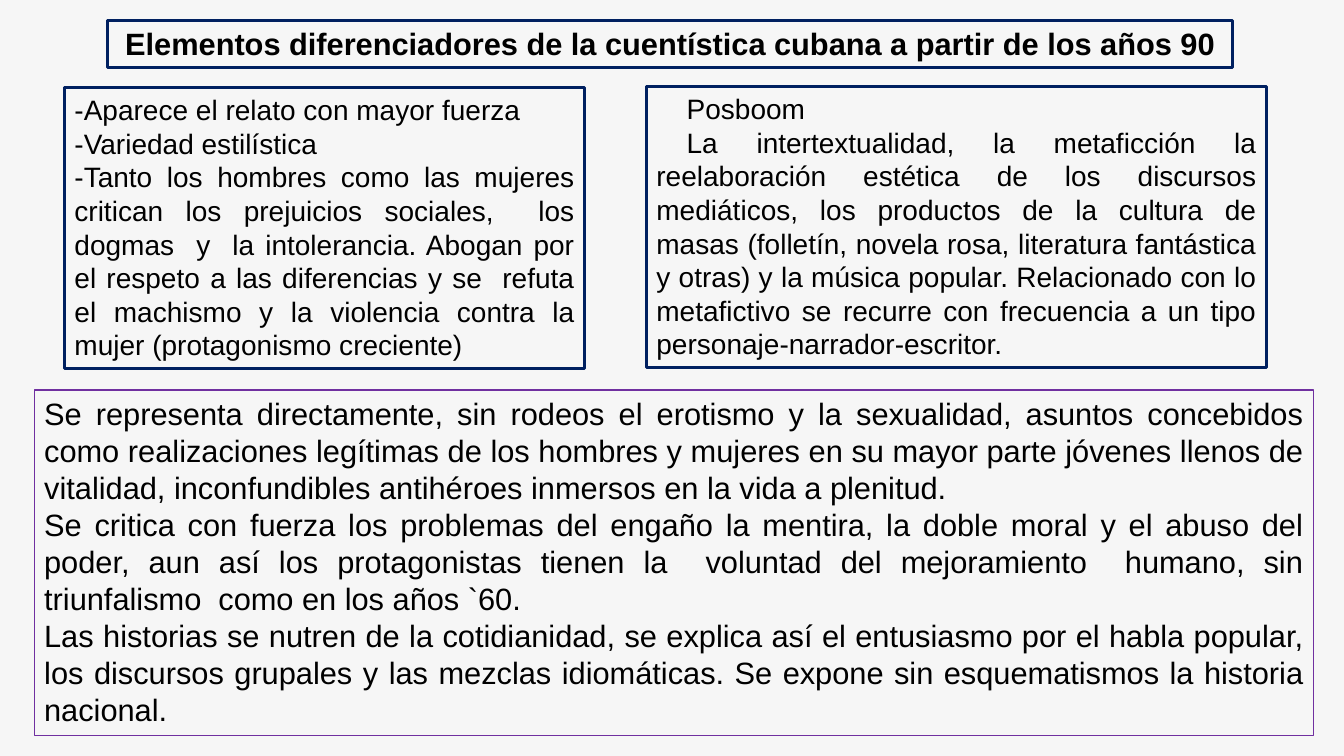
from pptx import Presentation
from pptx import util as u
from pptx.dml.color import RGBColor
from pptx.enum import shapes, text

NAVY, PURPLE, BLACK, PAPER = "002060", "7030A0", "000000", "F6F6F6"

TITLE = ["Elementos diferenciadores de la cuentística cubana a partir de los años 90"]
STYLE_TRAITS = [
    "-Aparece el relato con mayor fuerza",
    "-Variedad estilística",
    "-Tanto los hombres como las mujeres critican los prejuicios sociales,  los dogmas  y  "
    "la intolerancia. Abogan por el respeto a las diferencias y se  refuta el machismo y la "
    "violencia contra la mujer (protagonismo creciente)",
]
POSBOOM = [
    "Posboom",
    "La intertextualidad, la metaficción la reelaboración estética de los discursos "
    "mediáticos, los productos de la cultura de masas (folletín, novela rosa, literatura "
    "fantástica y otras) y la música popular. Relacionado con lo metafictivo se recurre con "
    "frecuencia a un tipo personaje-narrador-escritor.",
]
THEMES = [
    "Se representa directamente, sin rodeos el erotismo y la sexualidad, asuntos concebidos "
    "como realizaciones legítimas de los hombres y mujeres en su mayor parte jóvenes llenos "
    "de vitalidad, inconfundibles antihéroes inmersos en la vida a plenitud.",
    "Se critica con fuerza los problemas del engaño la mentira, la doble moral y el abuso "
    "del poder, aun así los protagonistas tienen la  voluntad del mejoramiento  humano, sin "
    "triunfalismo  como en los años `60.",
    "Las historias se nutren de la cotidianidad, se explica así el entusiasmo por el habla "
    "popular, los discursos grupales y las mezclas idiomáticas. Se expone sin esquematismos "
    "la historia nacional.",
]


def color(value):
    return RGBColor.from_string(value)


class Deck:
    """Draws framed text on a slide, with lengths in percent of its size."""

    font = "Arial"

    def __init__(self, width, height):
        self.prs = Presentation()
        self.prs.slide_width, self.prs.slide_height = u.Inches(width), u.Inches(height)
        self.s = self.prs.slides.add_slide(self.prs.slide_layouts[6])

    def background(self, fill):
        self.s.background.fill.solid()
        self.s.background.fill.fore_color.rgb = color(fill)

    def frame(self, left, top, width, height, paragraphs, size, line=NAVY, weight=2.25,
              align=text.PP_ALIGN.JUSTIFY, bold=False, indent=0):
        w, h = self.prs.slide_width / 100, self.prs.slide_height / 100
        sp = self.s.shapes.add_shape(shapes.MSO_SHAPE.RECTANGLE, int(left * w), int(top * h),
                                     int(width * w), int(height * h))
        sp.shadow.inherit = False
        sp.fill.background()
        sp.line.color.rgb = color(line)
        sp.line.width = u.Pt(weight)
        tf = sp.text_frame
        tf.word_wrap = True
        tf.auto_size = text.MSO_AUTO_SIZE.SHAPE_TO_FIT_TEXT
        tf.vertical_anchor = text.MSO_ANCHOR.TOP
        tf.text = "\n".join(paragraphs)
        for p in tf.paragraphs:
            p.alignment = align
            if indent:
                pPr = p._p.get_or_add_pPr()
                pPr.set("marL", "0")
                pPr.set("indent", str(u.Inches(indent)))
            for r in p.runs:
                r.font.name, r.font.size, r.font.bold = self.font, u.Pt(size), bold
                r.font.color.rgb = color(BLACK)


def main():
    deck = Deck(13.33, 7.5)
    deck.background(PAPER)
    deck.frame(8.03, 2.67, 83.7, 6.27, TITLE, 22, align=text.PP_ALIGN.CENTER, bold=True)
    deck.frame(4.8, 11.6, 38.7, 37.2, STYLE_TRAITS, 20)
    deck.frame(48.1, 11.47, 46.13, 37.2, POSBOOM, 20, indent=0.3)
    deck.frame(2.55, 51.6, 95.2, 45.73, THEMES, 22, line=PURPLE, weight=1)
    deck.prs.save("out.pptx")


if __name__ == "__main__":
    main()
